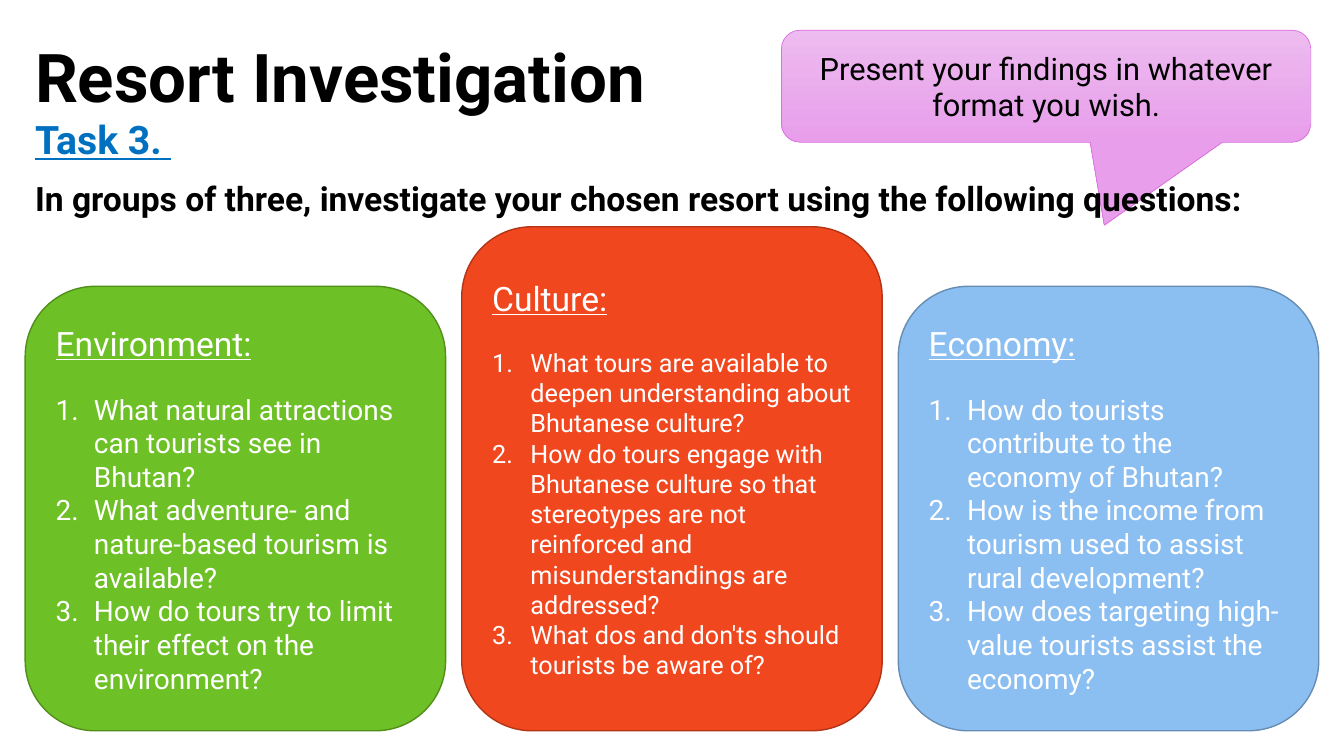
"""Build the Resort Investigation task slide."""
from lxml import etree
from pptx import Presentation
from pptx import util as u
from pptx.dml.color import RGBColor
from pptx.enum import shapes, text
from pptx.oxml import ns

WIDTH, HEIGHT = 13.33, 7.5
MARGIN = 0.25
COLUMN_WIDTH = 4.17
BLACK = RGBColor(0x00, 0x00, 0x00)
WHITE = RGBColor(0xFF, 0xFF, 0xFF)
BLUE = RGBColor(0x00, 0x70, 0xC0)
PINK_LINE = RGBColor(0xDA, 0x6F, 0xDF)
PINKS = RGBColor(0xED, 0xBB, 0xEF), RGBColor(0xE8, 0x9E, 0xEB)

TITLE = "Resort Investigation"
TASK = "Task 3. "
INSTRUCTION = "In groups of three, investigate your chosen resort using the following questions:"
CALLOUT = "Present your findings in whatever format you wish."
TOPICS = [
    dict(heading="Environment:", height=4.41, size=20,
         fill=RGBColor(0x6D, 0xC0, 0x25), line=RGBColor(0x51, 0x8E, 0x1B),
         questions=["What natural attractions can tourists see in Bhutan?",
                    "What adventure- and nature-based tourism is available?",
                    "How do tours try to limit their effect on the environment?"]),
    dict(heading="Culture:", height=5, size=18,
         fill=RGBColor(0xF1, 0x47, 0x1F), line=RGBColor(0xB2, 0x35, 0x17),
         questions=["What tours are available to deepen understanding about Bhutanese culture?",
                    "How do tours engage with Bhutanese culture so that stereotypes are not "
                    "reinforced and misunderstandings are addressed?",
                    "What dos and don'ts should tourists be aware of?"]),
    dict(heading="Economy:", height=4.41, size=20,
         fill=RGBColor(0x8B, 0xBE, 0xF1), line=RGBColor(0x67, 0x8D, 0xB2),
         questions=["How do tourists contribute to the economy of Bhutan?",
                    "How is the income from tourism used to assist rural development?",
                    "How does targeting high-value tourists assist the economy?"]),
]


def write(frame, words, size, color, bold=False, underline=False, numbered=False,
          align=text.PP_ALIGN.LEFT, before=0, after=0, spacing=1.0):
    frame.word_wrap = True
    first = frame.paragraphs[0]
    paragraph = frame.add_paragraph() if first.runs else first
    if numbered:
        properties = paragraph._p.get_or_add_pPr()
        properties.set("marL", str(u.Inches(0.38)))
        properties.set("indent", str(-u.Inches(0.38)))
        etree.SubElement(properties, ns.qn("a:buAutoNum"), type="arabicPeriod")
    paragraph.alignment = align
    paragraph.line_spacing = spacing
    paragraph.space_before, paragraph.space_after = u.Pt(before), u.Pt(after)
    run = paragraph.add_run()
    run.text = words
    run.font.name, run.font.size = "Roboto", u.Pt(size)
    run.font.bold, run.font.underline = bold, underline
    run.font.color.rgb = color


def add_panel(slide, kind, box, line, weight):
    shape = slide.shapes.add_shape(kind, *map(u.Inches, box))
    shape.shadow.inherit = False
    shape.line.color.rgb, shape.line.width = line, u.Pt(weight)
    shape.text_frame.vertical_anchor = text.MSO_ANCHOR.MIDDLE
    return shape


def add_callout(slide):
    shape = add_panel(slide, shapes.MSO_SHAPE.ROUNDED_RECTANGULAR_CALLOUT,
                      (7.75, 0.3, 5.25, 1.11), PINK_LINE, 0.5)
    for index, value in enumerate((0.11, 1.243, 0.167)):
        shape.adjustments[index] = value
    shape.fill.gradient()
    shape.fill.gradient_angle = 270
    for position, (stop, color) in enumerate(zip(shape.fill.gradient_stops, PINKS)):
        stop.position, stop.color.rgb = position, color
    write(shape.text_frame, CALLOUT, 22, BLACK, align=text.PP_ALIGN.CENTER)


def add_text_box(slide, top, height):
    box = (MARGIN, top, WIDTH - 2 * MARGIN, height)
    return slide.shapes.add_textbox(*map(u.Inches, box)).text_frame


def add_topic(slide, column, topic):
    pitch = (WIDTH - 2 * MARGIN - COLUMN_WIDTH) / (len(TOPICS) - 1)
    box = (MARGIN + column * pitch, HEIGHT - MARGIN - topic["height"],
           COLUMN_WIDTH, topic["height"])
    shape = add_panel(slide, shapes.MSO_SHAPE.ROUNDED_RECTANGLE, box, topic["line"], 1)
    shape.fill.solid()
    shape.fill.fore_color.rgb = topic["fill"]
    write(shape.text_frame, topic["heading"], 24, WHITE, underline=True, after=21)
    for question in topic["questions"]:
        write(shape.text_frame, question, topic["size"], WHITE, numbered=True)


def main():
    presentation = Presentation()
    presentation.slide_width, presentation.slide_height = u.Inches(WIDTH), u.Inches(HEIGHT)
    slide = presentation.slides.add_slide(presentation.slide_layouts[6])
    add_callout(slide)
    task = add_text_box(slide, 1.15, 1.69)
    write(task, TASK, 28, BLUE, bold=True, underline=True, spacing=0.9)
    write(task, INSTRUCTION, 24, BLACK, bold=True, before=13.5, spacing=0.9)
    write(add_text_box(slide, 0.3, 0.91), TITLE, 48, BLACK, bold=True)
    for column, topic in enumerate(TOPICS):
        add_topic(slide, column, topic)
    presentation.save("out.pptx")


if __name__ == "__main__":
    main()
